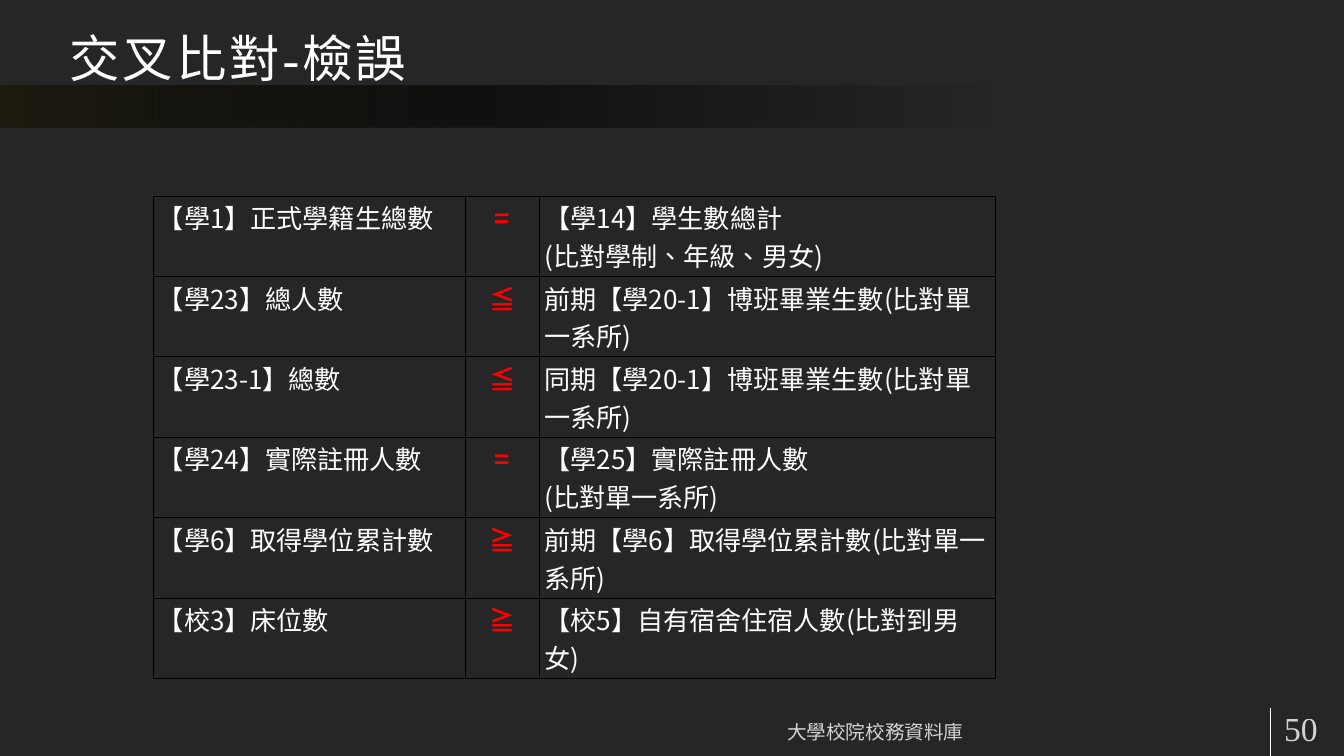
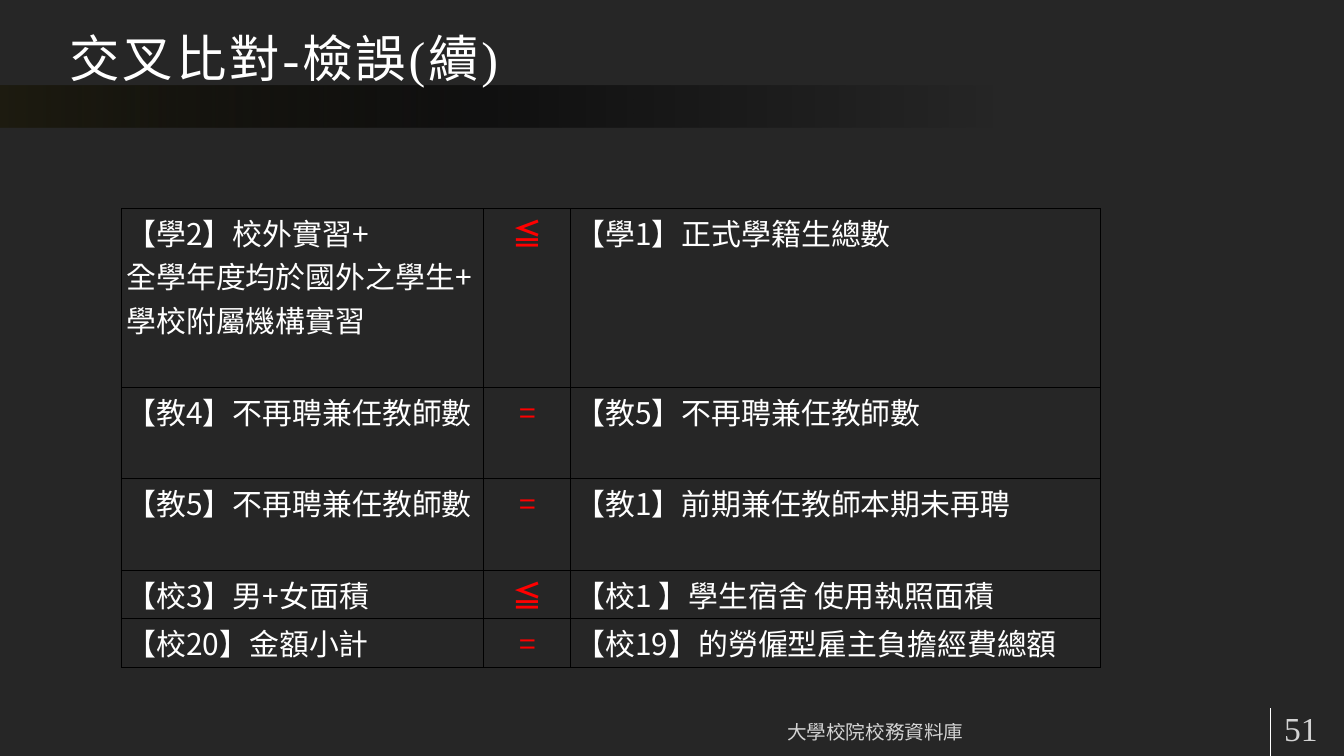
import pptx
import pptx.util
import pptx.dml.color
import pptx.enum.shapes
import pptx.enum.text
import lxml.etree
from pptx.oxml.ns import qn

Cm, Pt = pptx.util.Cm, pptx.util.Pt
ALIGN = pptx.enum.text.PP_ALIGN
ANCHOR = pptx.enum.text.MSO_ANCHOR

# Shared look
WIDTH, HEIGHT = 50.8, 28.58
GROUND, WHITE, RED, BLACK = "262626", "FFFFFF", "FF0000", "000000"
SERIF, SANS = "Times New Roman", "Noto Sans CJK SC"
BAND_STOPS = [(0, "1E1C11", 100), (39, BLACK, 54), (74, BLACK, 0)]
FOOTER = "大學校院校務資料庫"
FOOTER_TOP, FOOTER_HEIGHT, RULE_X = 26.77, 1.52, 48.01
FIRST_NUMBER = 50
NO_STYLE = "{2D5ABB26-0587-4C30-8999-92F81FD0307C}"

# Content: each check is (left side, sign, right side)
PAGES = [
    {
        "title": "交叉比對-檢誤",
        "left": 5.79, "top": 7.41, "size": 28,
        "columns": [11.79, 2.82, 17.22],
        "rows": [3.04] * 6,
        "bold_signs": "=≦≧",
        "checks": [
            ("【學1】正式學籍生總數", "=", "【學14】學生數總計\v(比對學制、年級、男女)"),
            ("【學23】總人數", "≦", "前期【學20-1】博班畢業生數(比對單一系所)"),
            ("【學23-1】總數", "≦", "同期【學20-1】博班畢業生數(比對單一系所)"),
            ("【學24】實際註冊人數", "=", "【學25】實際註冊人數\v(比對單一系所)"),
            ("【學6】取得學位累計數", "≧", "前期【學6】取得學位累計數(比對單一系所)"),
            ("【校3】床位數", "≧", "【校5】自有宿舍住宿人數(比對到男女)"),
        ],
    },
    {
        "title": "交叉比對-檢誤(續)",
        "left": 4.6, "top": 7.88, "size": 32,
        "columns": [13.69, 3.28, 20.04],
        "rows": [6.75, 3.46, 3.46, 1.84, 1.84],
        "bold_signs": "≦",
        "checks": [
            ("【學2】校外實習+\n全學年度均於國外之學生+\n學校附屬機構實習", "≦",
             "【學1】正式學籍生總數"),
            ("【教4】不再聘兼任教師數", "=", "【教5】不再聘兼任教師數"),
            ("【教5】不再聘兼任教師數", "=", "【教1】前期兼任教師本期未再聘"),
            ("【校3】男+女面積", "≦", "【校1 】學生宿舍 使用執照面積"),
            ("【校20】金額小計", "=", "【校19】的勞僱型雇主負擔經費總額"),
        ],
    },
]


def rgb(color):
    return pptx.dml.color.RGBColor.from_string(color)


def add_node(parent, tag, **attributes):
    return lxml.etree.SubElement(parent, qn(tag), attributes)


def write(frame, text, size, face, color=WHITE, bold=False, align=ALIGN.LEFT,
          alpha=None, spacing=None):
    frame.text = text
    for para in frame.paragraphs:
        para.alignment = align
        font = para.font
        font.size, font.name, font.bold = Pt(size), face, bold
        font.color.rgb = rgb(color)
        properties = font._element
        properties.set("lang", "zh-TW")
        add_node(properties, "a:ea", typeface=SANS)
        if alpha:
            add_node(properties.find(".//" + qn("a:srgbClr")), "a:alpha", val=str(alpha * 1000))
        if spacing:
            properties.set("spc", str(spacing * 100))


def add_label(page, place, text, size, anchor, bottom=0.23, **style):
    frame = page.shapes.add_textbox(*map(Cm, place)).text_frame
    frame.word_wrap = True
    frame.vertical_anchor = anchor
    frame.margin_left = frame.margin_right = Cm(0.46)
    frame.margin_top, frame.margin_bottom = Cm(0.23), Cm(bottom)
    write(frame, text, size, SERIF, **style)


def add_band(page):
    band = page.shapes.add_shape(pptx.enum.shapes.MSO_SHAPE.RECTANGLE,
                                 Cm(0), Cm(3.23), Cm(WIDTH), Cm(1.6))
    band.shadow.inherit = False
    band.line.fill.background()
    band.fill.gradient()
    band.fill.gradient_angle = 0
    stops = band._element.spPr.find(".//" + qn("a:gsLst"))
    stops.clear()
    for position, color, alpha in BAND_STOPS:
        stop = add_node(stops, "a:gs", pos=str(position * 1000))
        add_node(add_node(stop, "a:srgbClr", val=color), "a:alpha", val=str(alpha * 1000))


def add_rule(page):
    rule = page.shapes.add_connector(pptx.enum.shapes.MSO_CONNECTOR.STRAIGHT,
                                     Cm(RULE_X), Cm(FOOTER_TOP), Cm(RULE_X), Cm(HEIGHT))
    rule.line.color.rgb = rgb(WHITE)
    rule.line.width = Pt(0.75)
    add_node(rule._element.spPr, "a:effectLst")


def add_borders(cell):
    properties = cell._tc.get_or_add_tcPr()
    for side in "LRTB":
        line = add_node(properties, "a:ln" + side, w=str(Pt(1)))
        add_node(add_node(line, "a:solidFill"), "a:srgbClr", val=BLACK)


def add_checks(page, content):
    checks, columns, rows = content["checks"], content["columns"], content["rows"]
    table = page.shapes.add_table(len(checks), len(columns), Cm(content["left"]),
                                  Cm(content["top"]), Cm(sum(columns)), Cm(sum(rows))).table
    table.first_row = table.horz_banding = False
    table._tbl.tblPr.find(qn("a:tableStyleId")).text = NO_STYLE
    for column, width in zip(table.columns, columns):
        column.width = Cm(width)
    for row, height, check in zip(table.rows, rows, checks):
        row.height = Cm(height)
        for index, (cell, text) in enumerate(zip(row.cells, check)):
            cell.margin_left = cell.margin_right = Cm(0.18)
            cell.margin_top = cell.margin_bottom = Cm(0.09)
            add_borders(cell)
            cell.fill.background()
            style = {}
            if index == 1:
                style = {"color": RED, "align": ALIGN.CENTER,
                         "bold": text in content["bold_signs"]}
            write(cell.text_frame, text, content["size"], SANS, **style)


def add_page(deck, number, content):
    page = deck.slides.add_slide(deck.slide_layouts[6])
    page.background.fill.solid()
    page.background.fill.fore_color.rgb = rgb(GROUND)
    # Frame shared by every page
    add_band(page)
    add_rule(page)
    add_label(page, (2.18, 0, 45.72, 3.43), content["title"], 54, ANCHOR.BOTTOM,
              bottom=0.1, spacing=3)
    add_label(page, (18.19, FOOTER_TOP, 29.79, FOOTER_HEIGHT), FOOTER, 21, ANCHOR.BOTTOM,
              bottom=0.18, align=ALIGN.CENTER, alpha=80)
    add_label(page, (48.08, FOOTER_TOP, 2.92, FOOTER_HEIGHT), str(number), 36, ANCHOR.MIDDLE,
              alpha=80)
    # Table of cross-checks
    add_checks(page, content)


def main():
    deck = pptx.Presentation()
    deck.slide_width, deck.slide_height = Cm(WIDTH), Cm(HEIGHT)
    for number, content in enumerate(PAGES, FIRST_NUMBER):
        add_page(deck, number, content)
    deck.save("out.pptx")


if __name__ == "__main__":
    main()
